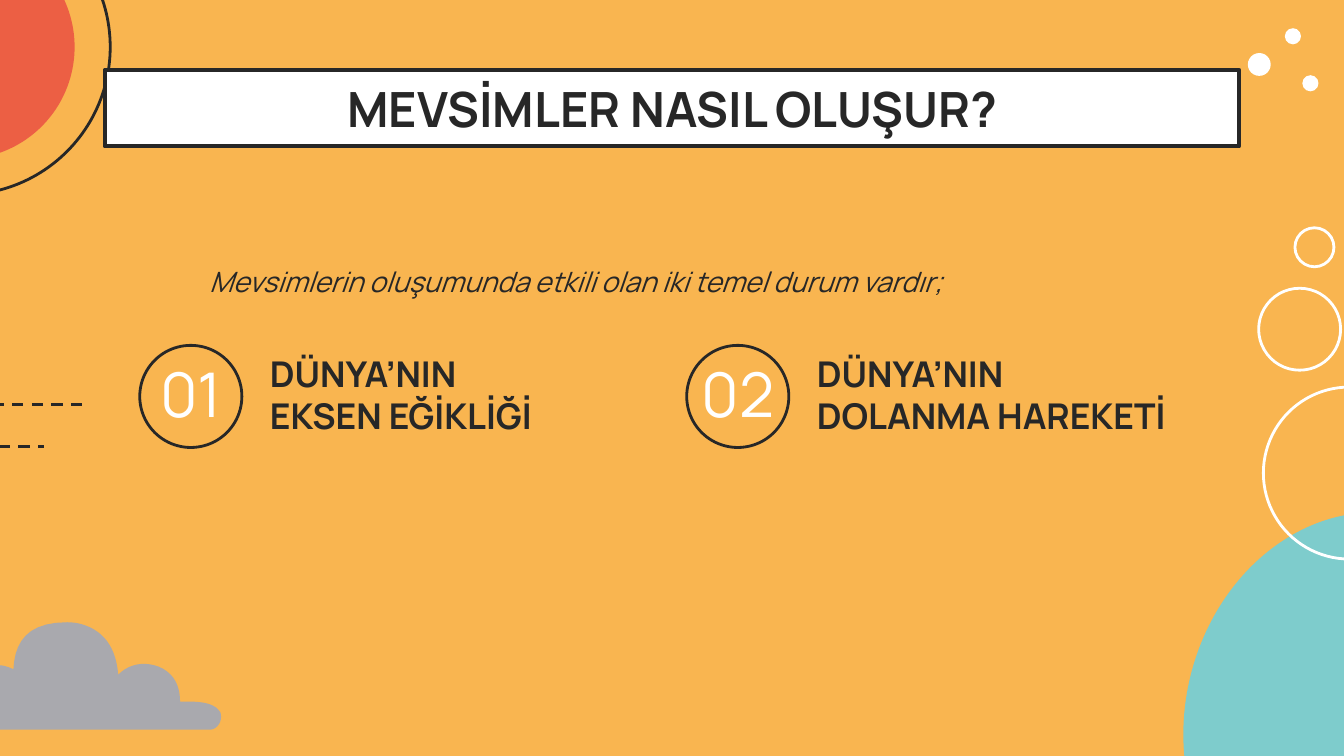
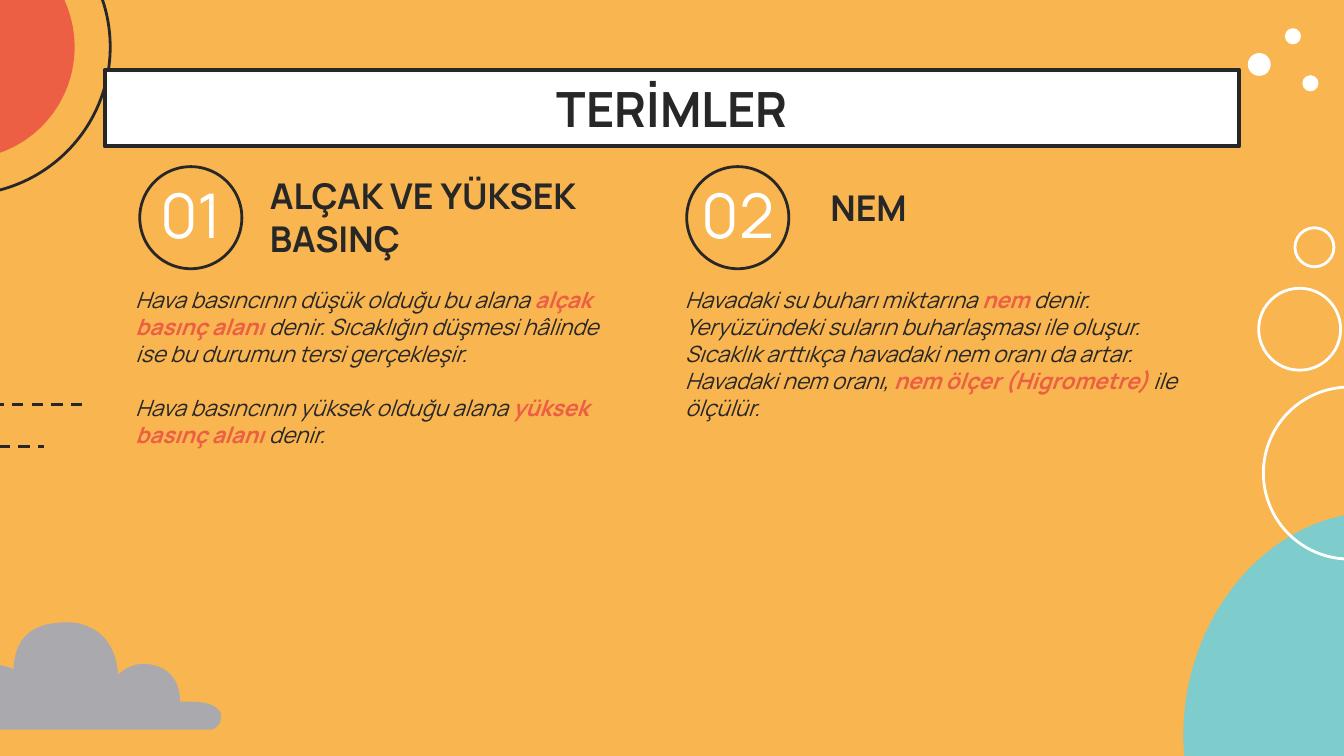
from lxml import etree
from pptx import Presentation
from pptx.dml.color import RGBColor
from pptx.enum.dml import MSO_LINE
from pptx.enum.shapes import MSO_CONNECTOR, MSO_SHAPE
from pptx.enum.text import MSO_ANCHOR, PP_ALIGN
from pptx.oxml.ns import qn
from pptx.util import Inches, Pt

DASH = MSO_LINE.DASH
STRAIGHT = MSO_CONNECTOR.STRAIGHT
OVAL, RECTANGLE = MSO_SHAPE.OVAL, MSO_SHAPE.RECTANGLE
TOP, MIDDLE, BOTTOM = MSO_ANCHOR.TOP, MSO_ANCHOR.MIDDLE, MSO_ANCHOR.BOTTOM
LEFT, CENTER = PP_ALIGN.LEFT, PP_ALIGN.CENTER

FONT = "Manrope"
INK, WHITE, ORANGE = "272727", "FFFFFF", "F9B550"
CORAL, TEAL, GREY = "EC5F44", "7ECCCC", "A9A9AE"

COLUMN_STEP = 4.07
WHITE_DOTS = [(9.37, 0.48, 0.17), (9.62, 0.27, 0.12), (9.75, 0.62, 0.12)]
WHITE_RINGS = [(10.04, 3.52, 1.28), (9.67, 2.45, 0.61), (9.78, 1.84, 0.29)]
CLOUD_START = (0.5, 4.63)
CLOUD_CURVES = [
    (0.2, 4.63, 0.11, 4.78, 0.1, 4.98),
    (0.06, 4.96, 0.02, 4.95, -0.01, 4.95),
    (-0.11, 4.95, -0.2, 5.01, -0.21, 5.15),
    (-0.22, 5.12, -0.24, 5.1, -0.27, 5.09),
    (-0.29, 5.07, -0.32, 5.07, -0.34, 5.08),
    (-0.4, 5.08, -0.46, 5.12, -0.48, 5.2),
    (-0.5, 5.14, -0.55, 5.11, -0.6, 5.09),
    (-0.66, 5.07, -0.72, 5.08, -0.78, 5.1),
    (-0.88, 5.14, -0.96, 5.22, -0.95, 5.32),
    (-1, 5.28, -1.05, 5.29, -1.09, 5.31),
    (-1.14, 5.35, -1.15, 5.41, -1.1, 5.44),
    (-0.74, 5.43, -0.37, 5.43, 0.01, 5.43),
    (0.5, 5.43, 1.1, 5.43, 1.56, 5.43),
    (1.62, 5.43, 1.66, 5.36, 1.64, 5.3),
    (1.63, 5.29, 1.62, 5.27, 1.6, 5.26),
    (1.54, 5.22, 1.45, 5.22, 1.34, 5.22),
    (1.34, 5.11, 1.3, 5.01, 1.18, 4.96),
    (1.07, 4.92, 0.96, 4.94, 0.88, 5.02),
    (0.87, 4.91, 0.84, 4.8, 0.75, 4.72),
    (0.68, 4.66, 0.59, 4.63, 0.5, 4.63),
]


def color(value):
    """Turn a hex string into a colour."""
    return RGBColor.from_string(value)


def curve_points(start, curves, steps=10):
    """Return points along a chain of cubic curves."""
    points = []
    for x1, y1, x2, y2, x3, y3 in curves:
        for step in range(1, steps + 1):
            t = step / steps
            u = 1 - t
            weights = (u ** 3, 3 * u * u * t, 3 * u * t * t, t ** 3)
            points.append(tuple(
                sum(w * v for w, v in zip(weights, values))
                for values in ((start[0], x1, x2, x3), (start[1], y1, y2, y3))))
        start = (x3, y3)
    return points


class SeasonDeck:
    """Holds the deck style and the slide being drawn."""

    def __init__(self):
        self.deck = Presentation()
        self.deck.slide_width, self.deck.slide_height = Inches(10), Inches(5.625)
        self.slide = None

    def paint(self, shape, fill, line, width):
        """Give a shape its fill and outline."""
        shape.shadow.inherit = False
        if fill:
            shape.fill.solid()
            shape.fill.fore_color.rgb = color(fill)
        else:
            shape.fill.background()
        if line:
            shape.line.color.rgb = color(line)
            shape.line.width = Pt(width)
        else:
            shape.line.fill.background()

    def shape(self, kind, place, fill=None, line=None, width=1.5, rotation=0):
        """Add a preset shape."""
        shape = self.slide.shapes.add_shape(kind, *map(Inches, place))
        shape.rotation = rotation
        self.paint(shape, fill, line, width)

    def circle(self, x, y, size, fill=None, line=None):
        """Add a circle around a centre."""
        self.shape(OVAL, (x - size / 2, y - size / 2, size, size), fill, line)

    def dashes(self, left, right, y):
        """Add a level dashed line."""
        line = self.slide.shapes.add_connector(
            STRAIGHT, Inches(left), Inches(y), Inches(right), Inches(y))
        line.line.color.rgb = color(INK)
        line.line.width = Pt(1.5)
        line.line.dash_style = DASH
        etree.SubElement(line._element.spPr, qn("a:effectLst"))

    def cloud(self):
        """Add the cloud."""
        points = [(Inches(x), Inches(y)) for x, y in curve_points(CLOUD_START, CLOUD_CURVES)]
        builder = self.slide.shapes.build_freeform(*map(Inches, CLOUD_START))
        builder.add_line_segments(points, close=True)
        self.paint(builder.convert_to_shape(), GREY, None, 0)

    def text(self, place, paragraphs, size, anchor=TOP, align=LEFT,
             ink=INK, bold=False, italic=False, gap=0):
        """Add a text box; every second span of a paragraph is highlighted."""
        box = self.slide.shapes.add_textbox(*map(Inches, place))
        frame = box.text_frame
        frame.word_wrap = True
        frame.vertical_anchor = anchor
        frame.margin_left = frame.margin_right = Inches(0.1)
        frame.margin_top = frame.margin_bottom = Inches(0.1)
        for index, spans in enumerate(paragraphs):
            para = frame.add_paragraph() if index else frame.paragraphs[0]
            para.alignment = align
            para.space_before = Pt(gap if index else 0)
            for number, words in enumerate(spans):
                marked = number % 2 == 1
                for row, part in enumerate(words.split("\n")):
                    if row:
                        para.add_line_break()
                    span = para.add_run()
                    span.text = part
                    span.font.name = FONT
                    span.font.size = Pt(size)
                    span.font.bold = bold or marked
                    span.font.italic = italic
                    span.font.color.rgb = color(CORAL if marked else ink)

    def heading(self, place, words):
        """Add the heading beside a number."""
        self.text(place, [[words]], 19, BOTTOM, bold=True)

    def body(self, place, paragraphs):
        """Add explaining text."""
        self.text(place, paragraphs, 12, italic=True, gap=14.4)

    def numbers(self, text_top, ring_y):
        """Add the two ringed numbers."""
        for column, number in enumerate(("01", "02")):
            shift = column * COLUMN_STEP
            self.text((0.93 + shift, text_top, 0.98, 0.58), [[number]], 33, MIDDLE, CENTER, WHITE)
            self.circle(1.42 + shift, ring_y, 0.76, line=INK)

    def page(self, title):
        """Start a slide with its scenery and title band."""
        self.slide = self.deck.slides.add_slide(self.deck.slide_layouts[6])
        self.slide.background.fill.solid()
        self.slide.background.fill.fore_color.rgb = color(ORANGE)
        self.circle(-0.28, 0.35, 2.2, line=INK)
        self.circle(-0.28, 0.35, 1.67, CORAL)
        self.shape(OVAL, (8.82, 3.8, 2.59, 3.08), TEAL, rotation=14)
        for x, y, size in WHITE_DOTS:
            self.circle(x, y, size, WHITE)
        self.dashes(-1.47, 0.33, 3.32)
        self.dashes(-0.64, 0.63, 3.01)
        self.cloud()
        for x, y, size in WHITE_RINGS:
            self.circle(x, y, size, line=WHITE)
        self.shape(RECTANGLE, (0.78, 0.52, 8.44, 0.57), WHITE, INK, 2.25)
        self.text((1.07, 0.49, 7.87, 0.63), [[title]], 26, MIDDLE, CENTER, bold=True)


def main():
    """Build both slides and save the deck."""
    seasons = SeasonDeck()

    seasons.page("MEVSİMLER NASIL OLUŞUR?")
    seasons.numbers(2.63, 2.95)
    for column, words in enumerate(("DÜNYA’NIN\nEKSEN EĞİKLİĞİ", "DÜNYA’NIN\nDOLANMA HAREKETİ")):
        seasons.heading((1.91 + column * COLUMN_STEP, 2.49, 3.02, 0.86), words)
    seasons.text((1.46, 1.87, 6.97, 0.55),
                 [["Mevsimlerin oluşumunda etkili olan iki temel durum vardır;"]], 15, italic=True)

    seasons.page("TERİMLER")
    seasons.numbers(1.3, 1.62)
    seasons.heading((1.91, 1.48, 3.02, 0.55), "ALÇAK VE YÜKSEK BASINÇ")
    seasons.heading((6.08, 1.08, 3.02, 0.72), "NEM")
    seasons.body((0.91, 2.03, 3.86, 1.88), [
        ["Hava basıncının düşük olduğu bu alana ", "alçak basınç alanı ",
         "denir. Sıcaklığın düşmesi hâlinde ise bu durumun tersi gerçekleşir."],
        ["Hava basıncının yüksek olduğu alana ", "yüksek basınç alanı ", "denir."],
    ])
    seasons.body((5, 2.03, 3.86, 1.42), [
        ["Havadaki su buharı miktarına ", "nem",
         " denir. Yeryüzündeki suların buharlaşması ile oluşur.\n"
         "Sıcaklık arttıkça havadaki nem oranı da artar. Havadaki nem oranı, ",
         "nem ölçer (Higrometre)", " ile ölçülür."],
    ])

    seasons.deck.save("out.pptx")


if __name__ == "__main__":
    main()
